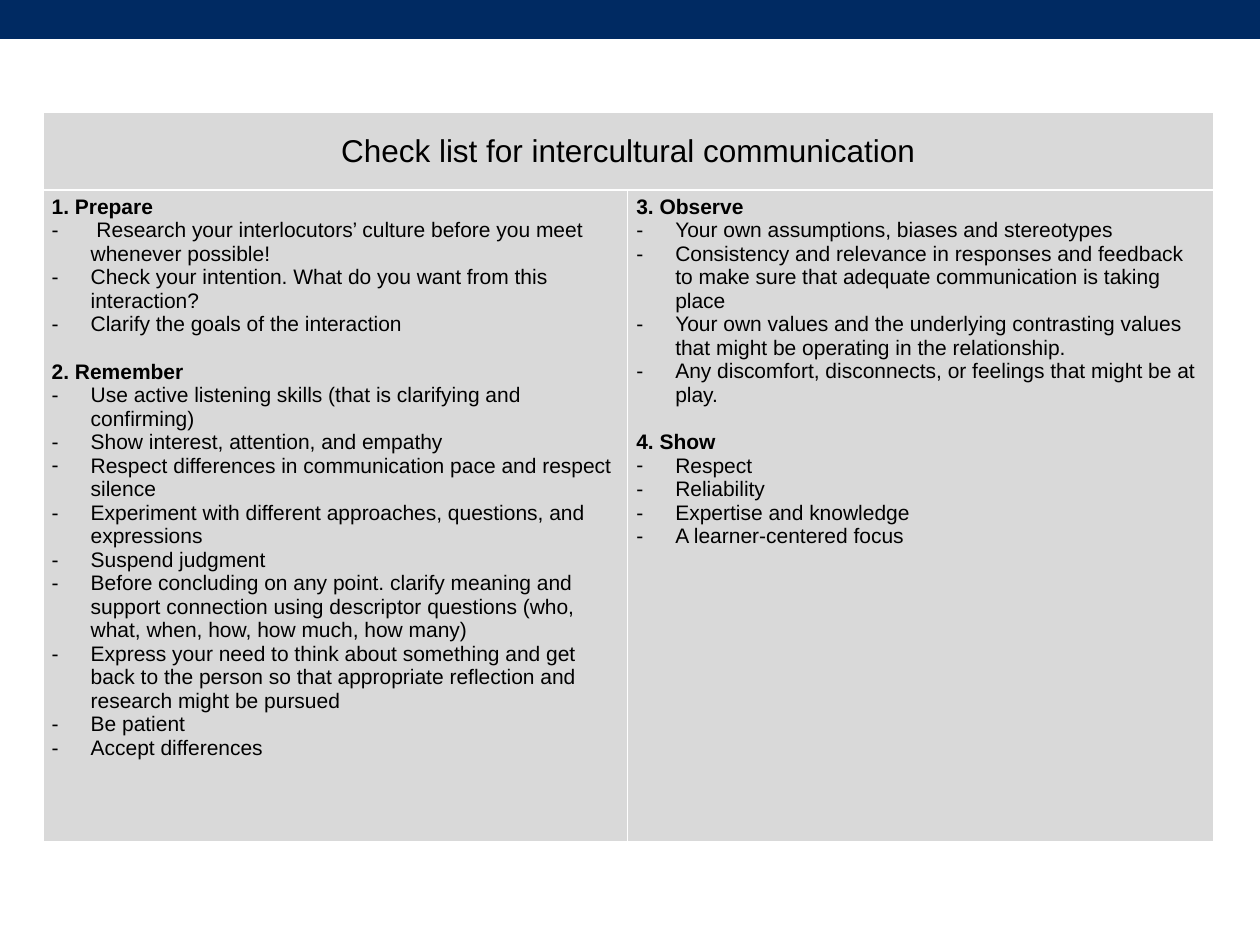
from dataclasses import dataclass

from lxml import etree
from pptx import Presentation
from pptx.dml.color import RGBColor
from pptx.enum.shapes import MSO_SHAPE
from pptx.enum.text import MSO_ANCHOR, PP_ALIGN
from pptx.oxml.ns import qn
from pptx.util import Inches, Pt

RECTANGLE = MSO_SHAPE.RECTANGLE
CENTER, LEFT = PP_ALIGN.CENTER, PP_ALIGN.LEFT
MIDDLE, TOP = MSO_ANCHOR.MIDDLE, MSO_ANCHOR.TOP

HEADING = "Check list for intercultural communication"
COLUMNS = [
    [
        ("1. Prepare", [
            " Research your interlocutors’ culture before you meet whenever possible!",
            "Check your intention. What do you want from this interaction?",
            "Clarify the goals of the interaction",
        ]),
        ("2. Remember", [
            "Use active listening skills (that is clarifying and confirming)",
            "Show interest, attention, and empathy",
            "Respect differences in communication pace and respect silence",
            "Experiment with different approaches, questions, and expressions",
            "Suspend judgment",
            "Before concluding on any point. clarify meaning and support connection "
            "using descriptor questions (who, what, when, how, how much, how many)",
            "Express your need to think about something and get back to the person "
            "so that appropriate reflection and research might be pursued",
            "Be patient",
            "Accept differences",
        ]),
    ],
    [
        ("3. Observe", [
            "Your own assumptions, biases and stereotypes",
            "Consistency and relevance in responses and feedback to make sure that "
            "adequate communication is taking place",
            "Your own values and the underlying contrasting values that might be "
            "operating in the relationship.",
            "Any discomfort, disconnects, or feelings that might be at play.",
        ]),
        ("4. Show", [
            "Respect",
            "Reliability",
            "Expertise and knowledge",
            "A learner-centered focus",
        ]),
    ],
]
COLUMN_WIDTHS = (4.64, 4.65)
ROW_HEIGHTS = (0.62, 5.17)


@dataclass(frozen=True)
class Theme:
    """Colours, font and type sizes of the slide."""
    bar = RGBColor(0x00, 0x2A, 0x62)
    cell = RGBColor(0xD9, 0xD9, 0xD9)
    text = RGBColor(0x00, 0x00, 0x00)
    border = "FFFFFF"
    border_width = Pt(1)
    font = "Arial"
    heading_size = Pt(18)
    body_size = Pt(12)
    section_gap = Pt(13.5)
    indent = Inches(0.31)


def format_cell(cell, anchor):
    properties = cell._tc.get_or_add_tcPr()
    for side in ("a:lnL", "a:lnR", "a:lnT", "a:lnB"):
        line = etree.SubElement(properties, qn(side), w=str(Theme.border_width))
        fill = etree.SubElement(line, qn("a:solidFill"))
        etree.SubElement(fill, qn("a:srgbClr"), val=Theme.border)
    cell.fill.solid()
    cell.fill.fore_color.rgb = Theme.cell
    cell.vertical_anchor = anchor
    cell.margin_left = cell.margin_right = Inches(0.07)
    cell.margin_top = cell.margin_bottom = Inches(0.04)


def write_paragraph(paragraph, text, size, bold=False, alignment=LEFT):
    paragraph.text = text
    paragraph.alignment = alignment
    font = paragraph.font
    font.name, font.size, font.bold = Theme.font, size, bold
    font.color.rgb = Theme.text


def add_dash(paragraph):
    properties = paragraph._p.get_or_add_pPr()
    properties.set("marL", str(Theme.indent))
    properties.set("indent", str(-Theme.indent))
    etree.SubElement(properties, qn("a:buFont"), typeface=Theme.font)
    etree.SubElement(properties, qn("a:buChar"), char="-")


def write_sections(cell, sections):
    frame = cell.text_frame
    for index, (title, items) in enumerate(sections):
        paragraph = frame.add_paragraph() if index else frame.paragraphs[0]
        if index:
            paragraph.space_before = Theme.section_gap
        write_paragraph(paragraph, title, Theme.body_size, bold=True)
        for item in items:
            paragraph = frame.add_paragraph()
            add_dash(paragraph)
            write_paragraph(paragraph, item, Theme.body_size)


def add_checklist(slide):
    table = slide.shapes.add_table(
        len(ROW_HEIGHTS), len(COLUMN_WIDTHS), Inches(0.34), Inches(0.89),
        Inches(sum(COLUMN_WIDTHS)), Inches(sum(ROW_HEIGHTS))).table
    table.first_row = table.horz_banding = False
    for column, width in zip(table.columns, COLUMN_WIDTHS):
        column.width = Inches(width)
    for row, height, anchor in zip(table.rows, ROW_HEIGHTS, (MIDDLE, TOP)):
        row.height = Inches(height)
        for cell in row.cells:
            format_cell(cell, anchor)
    heading = table.cell(0, 0)
    heading.merge(table.cell(0, 1))
    write_paragraph(heading.text_frame.paragraphs[0], HEADING,
                    Theme.heading_size, alignment=CENTER)
    for index, sections in enumerate(COLUMNS):
        write_sections(table.cell(1, index), sections)


def main():
    """Build the intercultural communication checklist slide."""
    presentation = Presentation()
    presentation.slide_width, presentation.slide_height = Inches(10), Inches(7.5)
    slide = presentation.slides.add_slide(presentation.slide_layouts.get_by_name("Blank"))
    bar = slide.shapes.add_shape(RECTANGLE, 0, 0, presentation.slide_width, Inches(0.31))
    bar.shadow.inherit = False
    bar.fill.solid()
    bar.fill.fore_color.rgb = Theme.bar
    bar.line.fill.background()
    add_checklist(slide)
    presentation.save("out.pptx")


if __name__ == "__main__":
    main()
